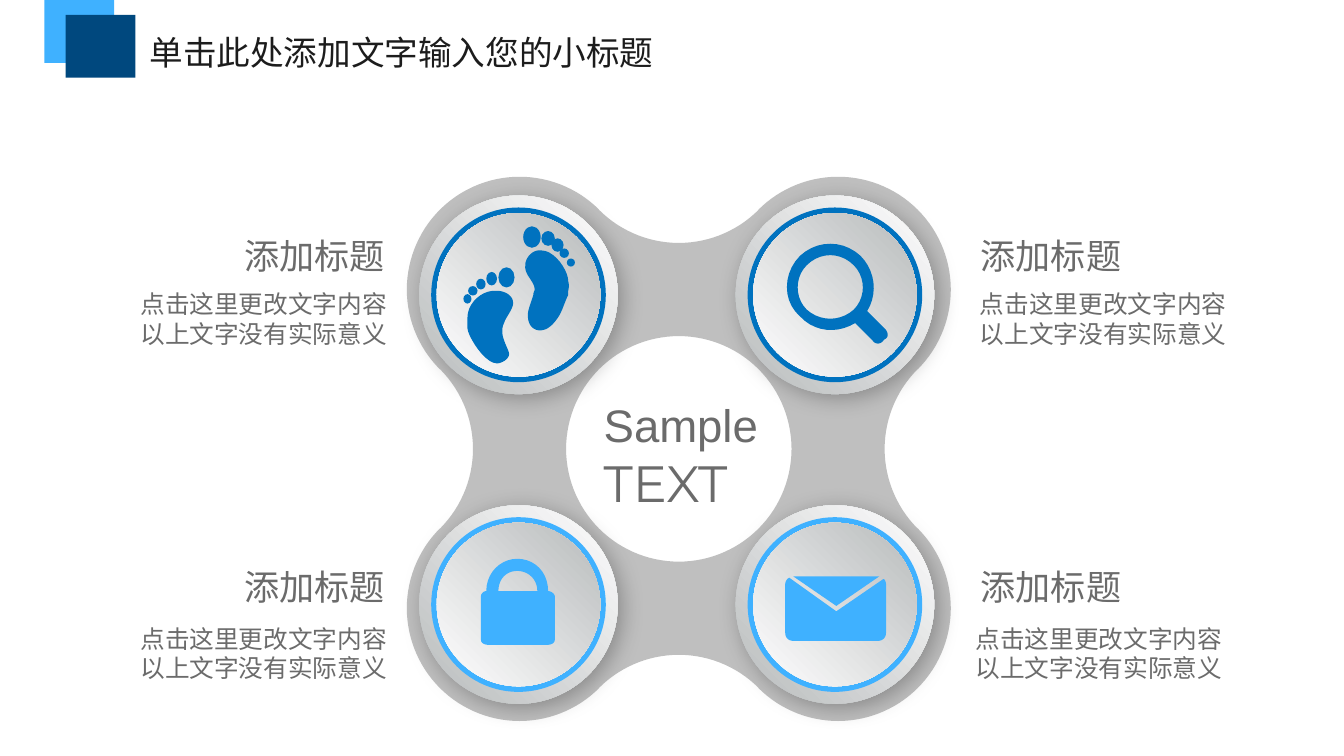
"""Build a slide with four icon badges around a central hub."""
from dataclasses import dataclass
from math import cos, radians, sin

from lxml.etree import SubElement
from pptx import Presentation
from pptx.dml.color import RGBColor
from pptx.enum.shapes import MSO_SHAPE as Shape
from pptx.enum.text import MSO_ANCHOR as Anchor, MSO_AUTO_SIZE as AutoSize, PP_ALIGN as Align
from pptx.oxml.ns import qn
from pptx.util import Cm, Pt

COLORS = {
    "sky": "3FB1FF", "navy": "00487E", "blue": "0072BF", "hub": "BFBFBF",
    "silver": "B8BBBC", "white": "FFFFFF", "ink": "1C1C1C", "grey": "6B6B6B",
}
CJK = "Noto Sans CJK SC"
HUB_X, HUB_Y = 12.83, 8.48
LOBE_OFFSET, LOBE_RADIUS = 3.01, 2.13
CURVE_STEPS = 10


@dataclass(frozen=True)
class Icon:
    """Outlines and ovals in hundredths of an inch from the badge centre."""
    outlines: tuple
    ovals: tuple = ()


@dataclass(frozen=True)
class Badge:
    x: float
    y: float
    color: str
    icon: Icon


@dataclass(frozen=True)
class Caption:
    heading_left: float
    heading_top: float
    body_left: float
    body_top: float
    align: Align


FEET = Icon(
    outlines=(
        (((37, 0), (37, -1, 37, -3, 37, -3), (37, -3, 38, -7, 37, -10),
          (37, -18, 27, -33, 17, -33), (11, -34, 5, -28, 5, -22), (4, -15, 12, -10, 12, -4),
          (12, -3, 11, -2, 11, 0), (10, 4, 7, 11, 7, 14), (7, 16), (7, 19, 8, 24, 13, 26),
          (16, 27, 19, 26, 19, 26), (24, 25, 30, 17, 32, 12), (33, 10, 35, 4, 37, 0)),),
        (((-4, 6), (-4, 0, -11, -3, -16, -3), (-27, -4, -38, 6, -38, 17), (-38, 25),
          (-37, 32, -25, 51, -16, 51), (-13, 51, -7, 48, -7, 44), (-7, 41, -13, 32, -12, 26),
          (-12, 23, -11, 22, -10, 19), (-8, 15, -4, 10, -4, 6)),),
    ),
    ovals=((39, -24, 6, 6), (34, -31, 7, 7), (29, -37, 9, 10), (22, -42, 10, 11),
           (10, -43, 13, 16), (-9, -13, 12, 15), (-20, -12, 8, 10), (-28, -8, 7, 8),
           (-34, -3, 7, 7), (-38, 3, 6, 7)),
)
MAGNIFIER = Icon(outlines=((
    ((19, -29), (6, -41, -13, -41, -26, -29), (-39, -16, -39, 5, -26, 16),
     (-15, 28, 2, 29, 15, 21), (28, 34), (30, 37, 34, 37, 36, 34), (37, 33),
     (40, 32, 40, 28, 37, 25), (24, 12), (32, -1, 30, -18, 19, -29)),
    ((14, 11), (4, 20, -11, 20, -21, 11), (-30, 2, -30, -13, -21, -22),
     (-11, -32, 4, -32, 14, -22), (23, -13, 23, 2, 14, 11)),
),))
LOCK = Icon(outlines=((
    ((22, -10), (22, -24, 12, -34, -1, -34), (-13, -34, -24, -24, -24, -10),
     (-26, -10, -28, -8, -28, -6), (-28, 26), (-28, 29, -25, 30, -22, 30), (21, 30),
     (24, 30, 27, 29, 27, 26), (27, -6), (27, -8, 24, -10, 22, -10)),
    ((-1, -25), (7, -25, 14, -19, 14, -10), (-15, -10), (-15, -19, -9, -25, -1, -25)),
),))
ENVELOPE = Icon(outlines=((
    ((33, -21), (-31, -21), (1, 1)),
    ((36, -19), (1, 5), (-34, -20), (-36, -19, -37, -17, -37, -15), (-37, 21),
     (-37, 25, -34, 27, -31, 27), (32, 27), (35, 27, 38, 25, 38, 21), (38, -15),
     (38, -17, 37, -19, 36, -19)),
),))
BADGES = (
    Badge(9.8, 5.57, "blue", FEET), Badge(15.78, 11.42, "sky", ENVELOPE),
    Badge(15.78, 5.57, "blue", MAGNIFIER), Badge(9.8, 11.42, "sky", LOCK),
)
CAPTIONS = (
    Caption(4.42, 4.32, -1.6, 5.36, Align.RIGHT), Caption(18.34, 4.32, 18.34, 5.36, Align.LEFT),
    Caption(4.42, 10.59, -1.6, 11.68, Align.RIGHT), Caption(18.34, 10.59, 18.26, 11.68, Align.LEFT),
)


def rgb(color: str) -> RGBColor:
    return RGBColor.from_string(COLORS[color])


def paint(shape, color: str) -> None:
    shape.shadow.inherit = False
    shape.line.fill.background()
    shape.fill.solid()
    shape.fill.fore_color.rgb = rgb(color)


def add_filled(shapes, kind: Shape, left: float, top: float, width: float, height: float, color: str):
    shape = shapes.add_shape(kind, Cm(left), Cm(top), Cm(width), Cm(height))
    paint(shape, color)
    return shape


def add_oval(shapes, x: float, y: float, width: float, height: float, color: str):
    return add_filled(shapes, Shape.OVAL, x - width / 2, y - height / 2, width, height, color)


def add_outline(shapes, contours: list, color: str) -> None:
    """Draw closed contours of centimetre points as one shape."""
    scaled = [[(Cm(x), Cm(y)) for x, y in contour] for contour in contours]
    builder = shapes.build_freeform(*scaled[0][0])
    for index, (start, *points) in enumerate(scaled):
        if index:
            builder.move_to(*start)
        builder.add_line_segments(points, close=True)
    paint(builder.convert_to_shape(), color)


def flatten(contour: tuple) -> list:
    """Turn line and cubic curve segments into points."""
    points = [contour[0]]
    for segment in contour[1:]:
        if len(segment) == 2:
            points.append(segment)
            continue
        x0, y0 = points[-1]
        x1, y1, x2, y2, x3, y3 = segment
        for step in range(1, CURVE_STEPS + 1):
            t = step / CURVE_STEPS
            a, b, c, d = (1 - t) ** 3, 3 * t * (1 - t) ** 2, 3 * t * t * (1 - t), t ** 3
            points.append((a * x0 + b * x1 + c * x2 + d * x3, a * y0 + b * y1 + c * y2 + d * y3))
    return points


def arc(x: float, y: float, start: int, end: int) -> list:
    step = 3 if end > start else -3
    return [(x + LOBE_RADIUS * cos(radians(angle)), y + LOBE_RADIUS * sin(radians(angle)))
            for angle in range(start, end + step, step)]


def add_hub(shapes) -> None:
    rim = []
    for angle in (45, 135, 225, 315):
        lobe, notch = radians(angle), radians(angle + 45)
        reach, far = LOBE_OFFSET * 2 ** 0.5, LOBE_OFFSET * 2
        rim += arc(HUB_X + reach * cos(lobe), HUB_Y + reach * sin(lobe), angle - 90, angle + 90)
        rim += arc(HUB_X + far * cos(notch), HUB_Y + far * sin(notch), angle - 90, angle - 180)
    add_outline(shapes, [rim, arc(HUB_X, HUB_Y, 0, 360)], "hub")


def shade(shape, start: str, end: str) -> None:
    shape.fill.gradient()
    shape.fill.gradient_angle = 45
    for stop, color in zip(shape.fill.gradient_stops, (start, end)):
        stop.color.rgb = rgb(color)


def add_shadow(shape) -> None:
    effects = shape._element.spPr.find(qn("a:effectLst"))
    shadow = SubElement(effects, qn("a:outerShdw"), blurRad=str(Pt(12)), dist=str(Pt(3)),
                        dir="2700000", algn="tl", rotWithShape="0")
    black = SubElement(shadow, qn("a:srgbClr"), val="000000")
    SubElement(black, qn("a:alpha"), val="28000")


def add_badge(shapes, badge: Badge) -> None:
    parts = shapes.add_group_shape().shapes
    plate, _, face = [add_oval(parts, badge.x, badge.y, size, size, badge.color)
                      for size in (3.75, 3.3, 3.09)]
    shade(plate, "silver", "white")
    add_shadow(plate)
    shade(face, "white", "silver")
    unit = 2.54 / 100
    for outline in badge.icon.outlines:
        add_outline(parts, [[(badge.x + x * unit, badge.y + y * unit) for x, y in flatten(contour)]
                            for contour in outline], badge.color)
    for x, y, width, height in badge.icon.ovals:
        add_oval(parts, badge.x + x * unit, badge.y + y * unit, width * unit, height * unit, badge.color)


def write(paragraph, text: str, *, size: float, font: str = CJK, color: str = "grey",
          align: Align = Align.LEFT) -> None:
    paragraph.alignment = align
    run = paragraph.add_run()
    run.text = text
    run.font.size = Pt(size)
    run.font.color.rgb = rgb(color)
    run.font.name = font
    SubElement(run._r.get_or_add_rPr(), qn("a:ea"), typeface=font)


def add_text_frame(shapes, left: float, top: float, width: float, height: float, wrap: bool = False):
    frame = shapes.add_textbox(Cm(left), Cm(top), Cm(width), Cm(height)).text_frame
    frame.word_wrap = wrap
    frame.margin_left = frame.margin_right = Cm(0.18)
    frame.margin_top = frame.margin_bottom = Cm(0.1)
    return frame


def add_caption(shapes, caption: Caption) -> None:
    heading = add_text_frame(shapes, caption.heading_left, caption.heading_top, 3.05, 0.99)
    write(heading.paragraphs[0], "添加标题", size=18.8, align=Align.CENTER)
    body = add_text_frame(shapes, caption.body_left, caption.body_top, 9.09, 1.32, wrap=True)
    write(body.paragraphs[0], "点击这里更改文字内容", size=13.2, align=caption.align)
    write(body.add_paragraph(), "以上文字没有实际意义", size=13.2, align=caption.align)


def main() -> None:
    deck = Presentation()
    deck.slide_width, deck.slide_height = Cm(25.4), Cm(14.28)
    slide = deck.slides.add_slide(deck.slide_layouts[5])
    shapes = slide.shapes

    title = shapes.title
    title.left, title.top, title.width, title.height = Cm(2.57), Cm(0.48), Cm(10.13), Cm(1.02)
    title.text_frame.word_wrap = False
    title.text_frame.auto_size = AutoSize.NONE
    title.text_frame.vertical_anchor = Anchor.TOP
    write(title.text_frame.paragraphs[0], "单击此处添加文字输入您的小标题", size=18, color="ink")

    add_filled(shapes, Shape.RECTANGLE, 0.84, 0, 1.32, 1.19, "sky")
    add_filled(shapes, Shape.RECTANGLE, 1.24, 0.28, 1.32, 1.19, "navy")
    add_hub(shapes)
    center = add_text_frame(shapes, 11.23, 7.39, 3.33, 2.41)
    write(center.paragraphs[0], "Sample", size=24.4, font="Arial")
    write(center.add_paragraph(), "TEXT", size=27.3, font="Montserrat")
    for badge in BADGES:
        add_badge(shapes, badge)
    for caption in CAPTIONS:
        add_caption(shapes, caption)
    deck.save("out.pptx")


if __name__ == "__main__":
    main()
